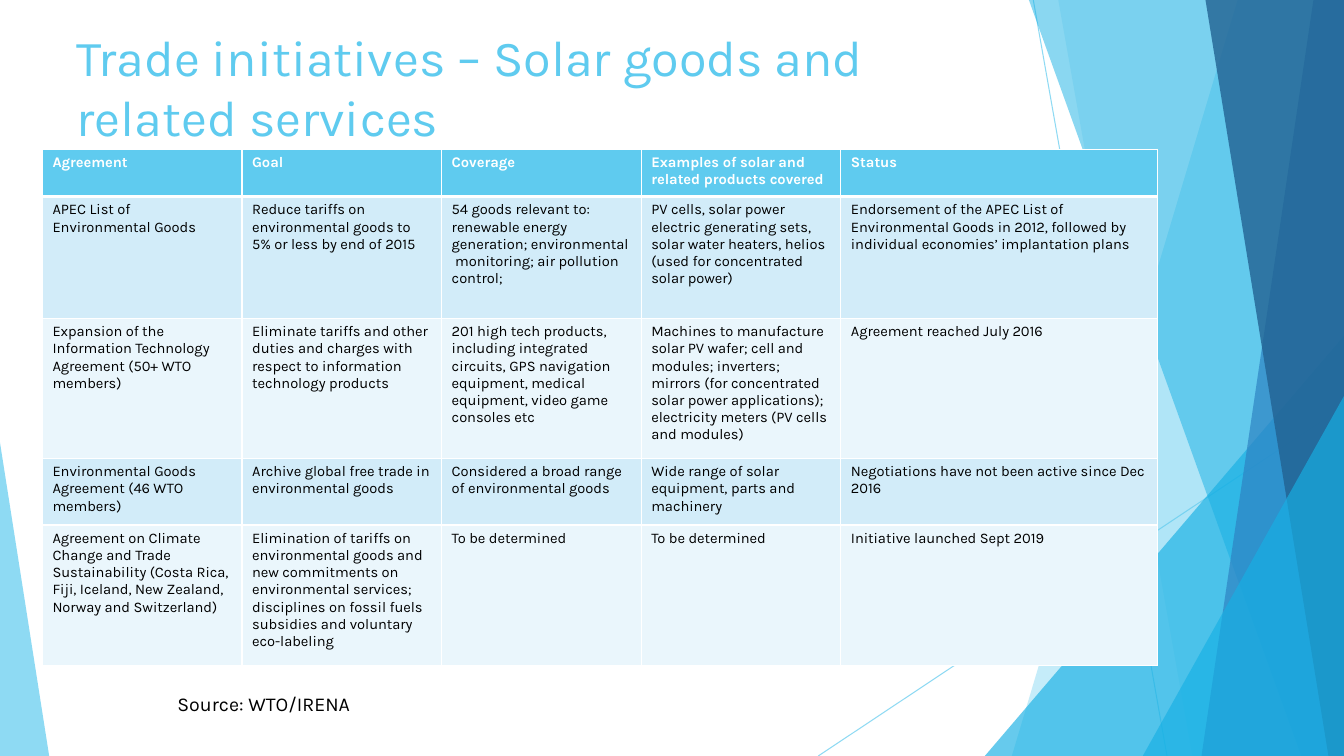
from lxml.etree import SubElement
from pptx import Presentation
from pptx.dml.color import RGBColor
from pptx.enum.shapes import MSO_CONNECTOR as CONN, MSO_SHAPE as SHAPE
from pptx.enum.text import MSO_ANCHOR as ANCHOR, MSO_AUTO_SIZE as FIT, PP_ALIGN as ALIGN
from pptx.oxml.ns import qn
from pptx.util import Cm, Pt

COLORS = {
    "sky": "5FCBEF", "cyan": "17B0E4", "blue": "2E83C3", "navy": "226292",
    "band": "D2ECF9", "pale": "EAF6FC", "white": "FFFFFF", "black": "000000",
}
W, H = 33.87, 19.05


def paint(fill, color, opacity=100):
    """Give a fill a solid named colour with an opacity in percent."""
    fill.solid()
    fill.fore_color.rgb = RGBColor.from_string(COLORS[color])
    if opacity < 100:
        rgb = fill._xPr.find(f"{qn('a:solidFill')}/{qn('a:srgbClr')}")
        SubElement(rgb, qn("a:alpha"), val=str(opacity * 1000))


def write(tf, text, size, color, bold=False):
    """Put one run of formatted text in a text frame."""
    r = tf.paragraphs[0].add_run()
    r.text = text
    for name, value in {"name": "Karla", "size": Pt(size), "bold": bold}.items():
        setattr(r.font, name, value)
    r.font.color.rgb = RGBColor.from_string(COLORS[color])


prs = Presentation()
prs.slide_width, prs.slide_height = Cm(W), Cm(H)
s = prs.slides.add_slide(prs.slide_layouts[5])

# Thin background lines: x1, y1, x2, y2
for ends in [(26.04, 0, 29.41, H), (W, 10.24, 20.62, H)]:
    line = s.shapes.add_connector(CONN.STRAIGHT, *map(Cm, ends))
    line.line.width = Pt(0.75)
    paint(line.line.fill, "sky", 70)
    SubElement(line._element.spPr, qn("a:effectLst"))

# Facets from back to front. Two numbers: top and bottom x of a panel that
# reaches the right edge. Four numbers: the box of a triangle.
facets = [
    ((31.19, 25.5), "sky", 36),
    ((26.67, 30.05), "sky", 20),
    ((24.82, 8.46, 9.05, 10.59), "cyan", 66),
    ((25.93, 32.79), "cyan", 50),
    ((33.1, 30.28), "blue", 70),
    ((30.38, 33.48), "navy", 80),
    ((28.8, 9.98, 5.07, 9.07), "cyan", 66),
    ((0, 11.15, 1.24, 7.9), "sky", 70),
]
for place, color, opacity in facets:
    if len(place) == 2:
        top, bottom = place
        outline = s.shapes.build_freeform(Cm(top), 0)
        corners = [(W, 0), (W, H), (bottom, H)]
        outline.add_line_segments([(Cm(x), Cm(y)) for x, y in corners])
        sp = outline.convert_to_shape()
    else:
        sp = s.shapes.add_shape(SHAPE.ISOSCELES_TRIANGLE, *map(Cm, place))
        sp.adjustments[0] = 1 if place[0] else 0
    sp.shadow.inherit = False
    sp.line.fill.background()
    paint(sp.fill, color, opacity)

title = s.shapes.title
s.shapes._spTree.append(title._element)  # bring in front of the facets
box = {"left": 1.68, "top": 0.53, "width": 23.88, "height": 3.66}
for name, value in box.items():
    setattr(title, name, Cm(value))
tf = title.text_frame
for name, value in {"auto_size": FIT.NONE, "vertical_anchor": ANCHOR.TOP, "word_wrap": True}.items():
    setattr(tf, name, value)
tf.paragraphs[0].alignment = ALIGN.LEFT
write(tf, "Trade initiatives – Solar goods and related services", 36, "sky")

rows = [
    ("Agreement", "Goal", "Coverage",
     "Examples of solar and related products covered", "Status"),
    ("APEC List of Environmental Goods",
     "Reduce tariffs on environmental goods to 5% or less by end of 2015",
     "54 goods relevant to: renewable energy generation; environmental "
     " monitoring; air pollution control;",
     "PV cells, solar power electric generating sets, solar water heaters, "
     "helios (used for concentrated solar power)",
     "Endorsement of the APEC List of Environmental Goods in 2012, "
     "followed by individual economies’ implantation plans"),
    ("Expansion of the Information Technology Agreement (50+ WTO members)",
     "Eliminate tariffs and other duties and charges with respect to "
     "information technology products",
     "201 high tech products, including integrated circuits, GPS navigation "
     "equipment, medical equipment, video game consoles etc",
     "Machines to manufacture solar PV wafer; cell and modules; inverters; "
     "mirrors (for concentrated solar power applications); "
     "electricity meters (PV cells and modules)",
     "Agreement reached July 2016"),
    ("Environmental Goods Agreement (46 WTO members)",
     "Archive global free trade in environmental goods",
     "Considered a broad range of environmental goods",
     "Wide range of solar equipment, parts and machinery",
     "Negotiations have not been active since Dec 2016"),
    ("Agreement on Climate Change and Trade Sustainability (Costa Rica, "
     "Fiji, Iceland, New Zealand, Norway and Switzerland)",
     "Elimination of tariffs on environmental goods and new commitments on "
     "environmental services; disciplines on fossil fuels subsidies and "
     "voluntary eco-labeling",
     "To be determined", "To be determined", "Initiative launched Sept 2019"),
]
widths = [5.03] * 4 + [7.98]
heights = [1.19, 3.07, 3.53, 1.68, 3.53]
table = s.shapes.add_table(len(rows), len(widths), Cm(1.07), Cm(3.76),
                           Cm(sum(widths)), Cm(sum(heights))).table
for column, width in zip(table.columns, widths):
    column.width = Cm(width)
for i, (texts, height) in enumerate(zip(rows, heights)):
    table.rows[i].height = Cm(height)
    header = i == 0
    fill = "sky" if header else ("pale", "band")[i % 2]
    for j, text in enumerate(texts):
        cell = table.cell(i, j)
        tcPr = cell._tc.get_or_add_tcPr()
        for side in "LRTB":
            thick = (header and side == "B") or (i == 1 and side == "T")
            ln = SubElement(tcPr, qn(f"a:ln{side}"), w=str(Pt(3 if thick else 1)))
            SubElement(SubElement(ln, qn("a:solidFill")), qn("a:srgbClr"), val=COLORS["white"])
        paint(cell.fill, fill)
        write(cell.text_frame, text, 10.5, "white" if header else "black", header)

source = s.shapes.add_textbox(Cm(4.22), Cm(17.32), Cm(6.65), Cm(0.86))
source.text_frame.word_wrap = True
write(source.text_frame, "Source: WTO/IRENA", 14, "black")

prs.save("out.pptx")
